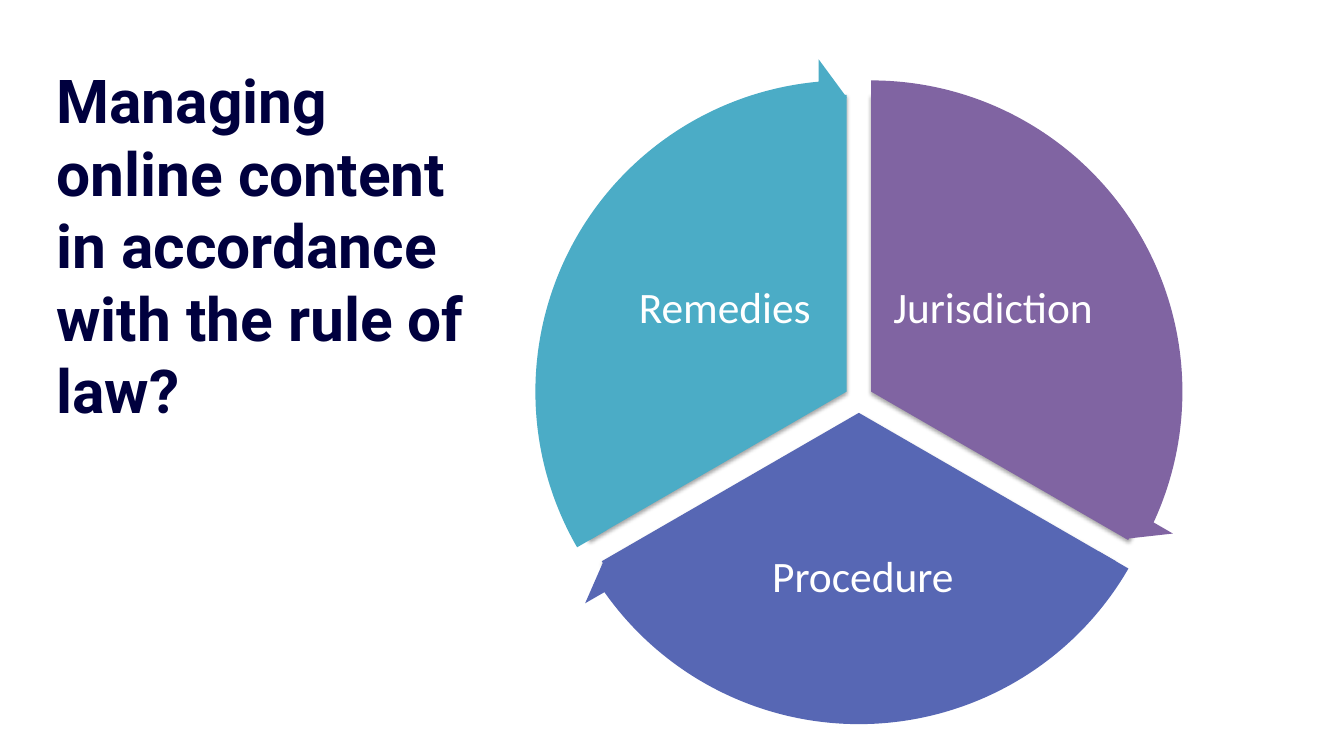
from math import cos, radians, sin

from lxml.etree import SubElement
from pptx import Presentation
from pptx.dml.color import RGBColor
from pptx.enum.shapes import MSO_SHAPE
from pptx.enum.text import MSO_ANCHOR, MSO_AUTO_SIZE, PP_ALIGN
from pptx.oxml.ns import qn
from pptx.util import Pt

SECTORS = [
    ("Jurisdiction", "8064A2", -30, (162, 18), (14.725, 161.994), (95.8, -64.1, 151.2, 126)),
    ("Procedure", "5767B4", 90, (18, 90), (86.72, 18.005), (2.8, 128.5, 227.5, 110.9)),
    ("Remedies", "4BACC6", 210, (90, 162), (158.73, 90), (-95.8, -64.1, 151.2, 126)),
]


def color(hex_code):
    """Turn a hex string into a colour."""
    return RGBColor.from_string(hex_code)


def centered(center, width, height):
    """Return the box of the given size around a centre, as lengths."""
    x, y = center
    return Pt(x - width / 2), Pt(y - height / 2), Pt(width), Pt(height)


def add_filled(slide, preset, center, size, adjustments, hex_code):
    """Add a square-boxed preset shape with a plain fill and no line."""
    shape = slide.shapes.add_shape(preset, *centered(center, size, size))
    for index, value in enumerate(adjustments):
        shape.adjustments[index] = value
    shape.fill.solid()
    shape.fill.fore_color.rgb = color(hex_code)
    shape.line.fill.background()
    shape.shadow.inherit = False
    return shape


def add_soft_shadow(shape):
    """Give a shape a soft shadow that falls straight down."""
    effects = shape._element.spPr.find(qn("a:effectLst"))
    shadow = SubElement(effects, qn("a:outerShdw"), blurRad=str(Pt(3.1)),
                        dist=str(Pt(1.8)), dir="5400000", rotWithShape="0")
    black = SubElement(shadow, qn("a:srgbClr"), val="000000")
    SubElement(black, qn("a:alpha"), val="35000")


def add_label(slide, center, width, height, text):
    """Add a white sector label around a centre."""
    label = slide.shapes.add_textbox(*centered(center, width, height))
    frame = label.text_frame
    frame.word_wrap = True
    frame.vertical_anchor = MSO_ANCHOR.MIDDLE
    frame.margin_left = frame.margin_right = Pt(3)
    frame.margin_top = frame.margin_bottom = Pt(3)
    frame.text = text
    paragraph = frame.paragraphs[0]
    paragraph.alignment = PP_ALIGN.CENTER
    paragraph.line_spacing = 0.9
    font = paragraph.runs[0].font
    font.name, font.size = "Calibri", Pt(31)
    font.color.rgb = color("FFFFFF")


def add_cycle(slide, hub_x, hub_y, diameter, gap):
    """Draw three sectors pushed out from the hub, then the arrows around them."""
    arrows = []
    for text, hex_code, angle, pie_angles, arrow_angles, place in SECTORS:
        center = (hub_x + gap * cos(radians(angle)), hub_y + gap * sin(radians(angle)))
        sector = add_filled(slide, MSO_SHAPE.PIE, center, diameter, pie_angles, hex_code)
        add_soft_shadow(sector)
        dx, dy, width, height = place
        add_label(slide, (hub_x + dx, hub_y + dy), width, height, text)
        arrows.append((center, (0.051, 3.275, *arrow_angles, 0.059), hex_code))
    for center, adjustments, hex_code in arrows:
        add_filled(slide, MSO_SHAPE.CIRCULAR_ARROW, center, diameter * 1.124,
                   adjustments, hex_code)


def add_title(slide, left, top, width, height):
    """Place and format the slide title."""
    title = slide.shapes.title
    title.left, title.top, title.width, title.height = map(Pt, (left, top, width, height))
    frame = title.text_frame
    frame.text = "Managing online content in accordance with the rule of law?"
    frame.word_wrap = True
    frame.auto_size = MSO_AUTO_SIZE.NONE
    frame.vertical_anchor = MSO_ANCHOR.MIDDLE
    frame.margin_left = frame.margin_right = frame.margin_top = frame.margin_bottom = 0
    paragraph = frame.paragraphs[0]
    paragraph.alignment = PP_ALIGN.LEFT
    font = paragraph.runs[0].font
    font.name, font.size, font.bold = "Roboto", Pt(43.2), True
    font.color.rgb = color("00003E")


def main():
    """Build and save the slide."""
    deck = Presentation()
    deck.slide_width, deck.slide_height = Pt(960), Pt(540)
    slide = deck.slides.add_slide(deck.slide_layouts[5])
    add_title(slide, 40.3, 25.2, 312.5, 298.8)
    add_cycle(slide, hub_x=613.5, hub_y=284.8, diameter=424, gap=10.1)
    deck.save("out.pptx")


if __name__ == "__main__":
    main()
